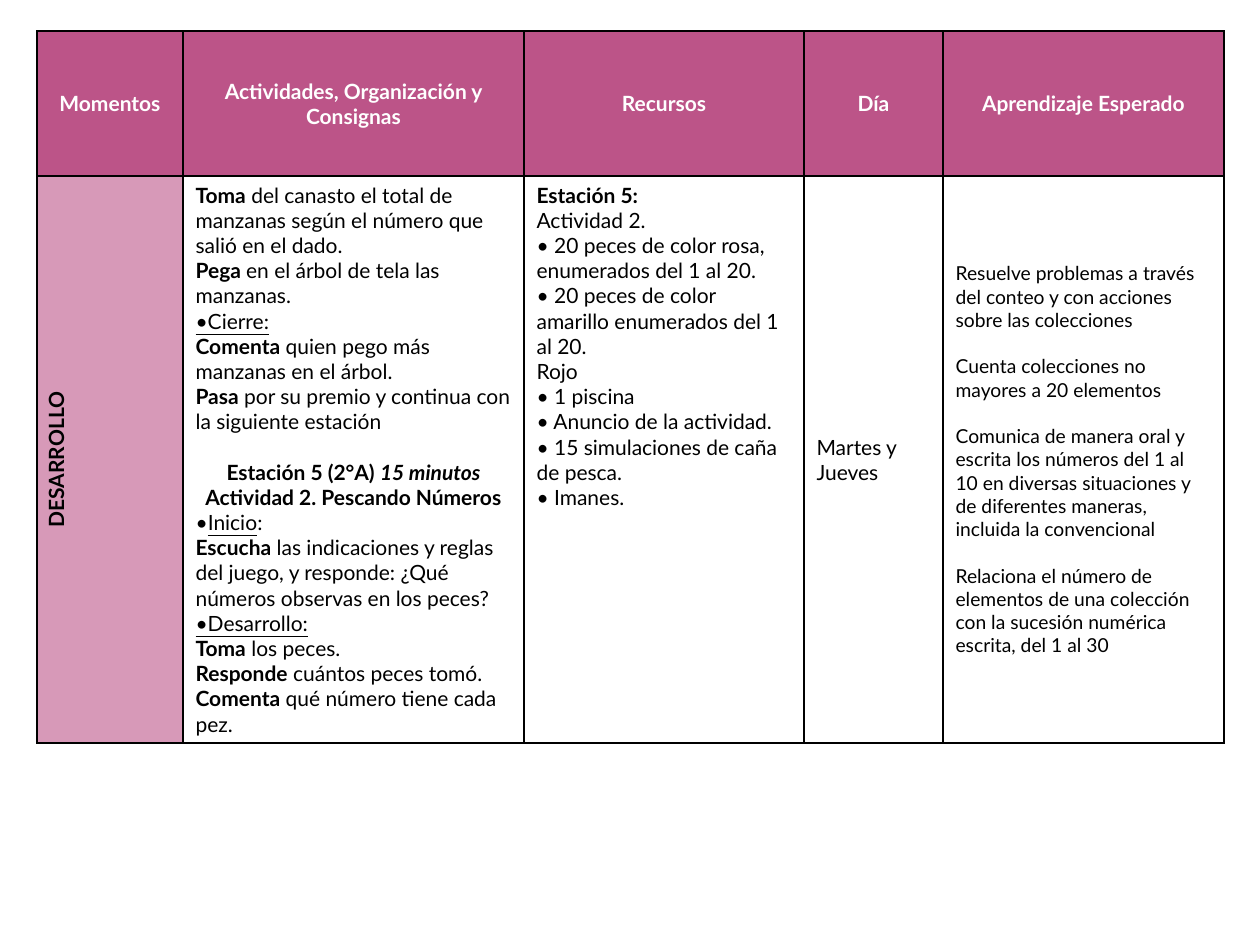
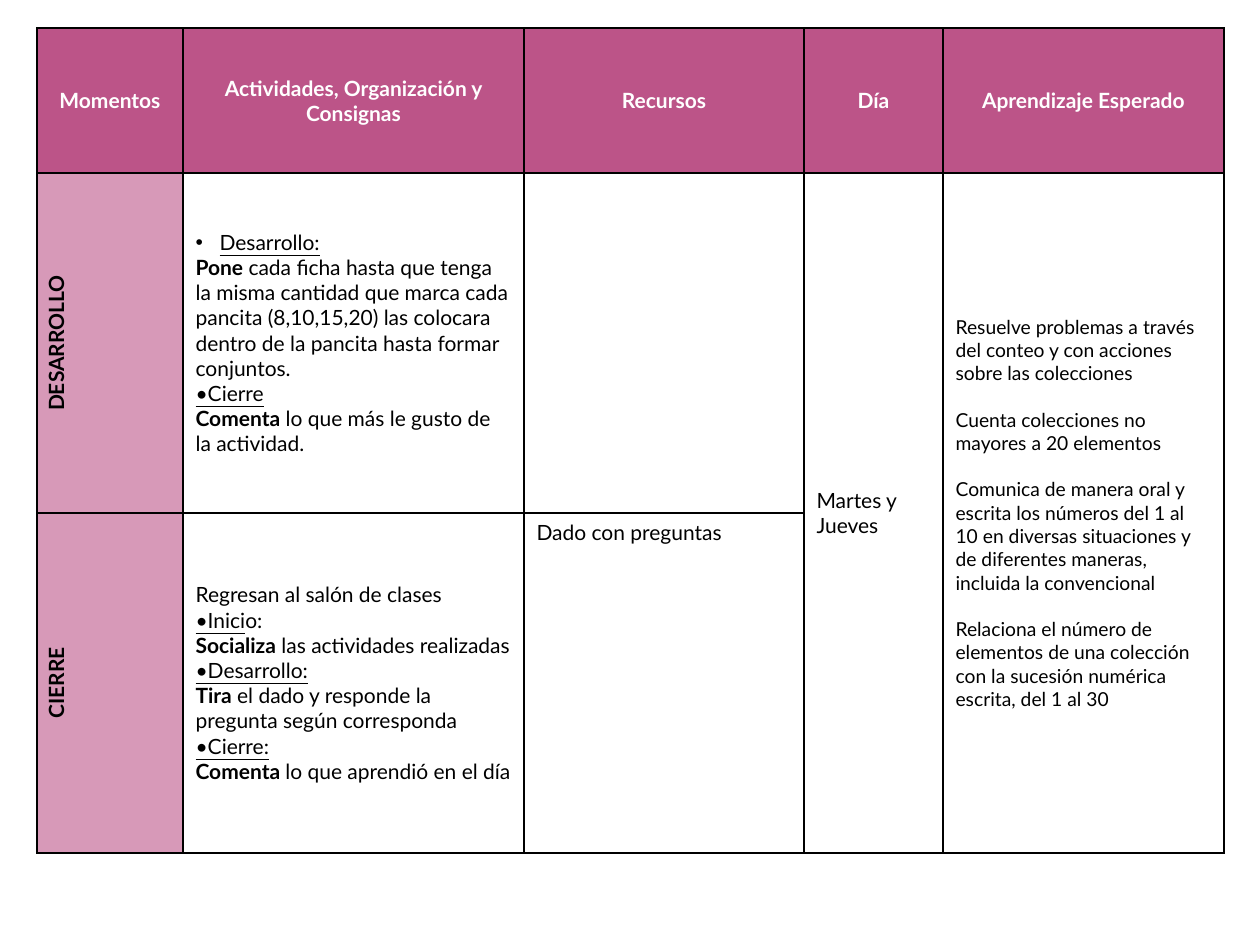
from lxml.etree import SubElement
from pptx import Presentation
from pptx.dml.color import RGBColor
from pptx.enum.text import MSO_ANCHOR, PP_ALIGN
from pptx.oxml.ns import qn
from pptx.util import Emu, Pt

PIXEL = 914400 / 126
ROSE = RGBColor(0xBC, 0x54, 0x88)
PINK = RGBColor(0xD7, 0x99, 0xB8)
WHITE = RGBColor(0xFF, 0xFF, 0xFF)
BLACK = RGBColor(0x00, 0x00, 0x00)
FONT = "Lato"
TABLE_LEFT = 37
COLUMN_WIDTHS = [146, 341, 280, 139, 281]
HEADER_HEIGHT = 145
LINE_GAP = 25
GOAL_GAP = 23


def write(paragraph, text, style="", size=12, color=BLACK):
    run = paragraph.add_run()
    run.text = text
    run.font.name = FONT
    run.font.size = Pt(size)
    run.font.color.rgb = color
    run.font.bold = "b" in style
    run.font.italic = "i" in style
    run.font.underline = "u" in style


def fill_cell(cell, lines, anchor=MSO_ANCHOR.MIDDLE, align=PP_ALIGN.LEFT, gap=0, **format):
    cell.vertical_anchor = anchor
    for index, line in enumerate(lines):
        frame = cell.text_frame
        paragraph = frame.add_paragraph() if index else frame.paragraphs[0]
        paragraph.alignment = align
        paragraph.space_before = Emu(int(gap * PIXEL)) if index else 0
        for text, style in line:
            write(paragraph, text, style, **format)


HEADERS = ["Momentos", "Actividades, Organización y Consignas", "Recursos", "Día",
           "Aprendizaje Esperado"]
GOALS = [
    "Resuelve problemas a través del conteo y con acciones sobre las colecciones",
    "Cuenta colecciones no mayores a 20 elementos",
    "Comunica de manera oral y escrita los números del 1 al 10 en diversas situaciones y de "
    "diferentes maneras, incluida la convencional",
    "Relaciona el número de elementos de una colección con la sucesión numérica escrita, "
    "del 1 al 30",
]
FISHING_ACTIVITIES = [
    [("Toma", "b"), (" del canasto el total de manzanas según el número que salió en el dado.", "")],
    [("Pega ", "b"), ("en el árbol de tela las manzanas.", "")],
    [("•Cierre:", "u")],
    [("Comenta", "b"), (" quien pego más manzanas en el árbol.", "")],
    [("Pasa", "b"), (" por su premio y continua con la siguiente estación", "")],
    [("Estación 5 (2°A) ", "b"), ("15 minutos", "bi")],
    [("Actividad 2. Pescando Números", "b")],
    [("•", ""), ("Inicio", "u"), (":", "")],
    [("Escucha", "b"), (" las indicaciones y reglas del juego, y responde: "
                        "¿Qué números observas en los peces?", "")],
    [("•Desarrollo:", "u")],
    [("Toma", "b"), (" los peces.", "")],
    [("Responde", "b"), (" cuántos peces tomó.", "")],
    [("Comenta", "b"), (" qué número tiene cada pez.", "")],
]
FISHING_RESOURCES = [
    [("Estación 5:", "b")],
    [("Actividad 2.", "")],
    [("• 20 peces de color rosa, enumerados del 1 al 20.", "")],
    [("• 20 peces de color amarillo enumerados del 1 al 20.", "")],
    [("Rojo", "")],
    [("• 1 piscina", "")],
    [("• Anuncio de la actividad.", "")],
    [("• 15 simulaciones de caña de pesca.", "")],
    [("• Imanes.", "")],
]
COUNTING_ACTIVITIES = [
    [("Desarrollo:", "u")],
    [("Pone", "b"), (" cada ficha hasta que tenga la misma cantidad que marca cada pancita "
                     "(8,10,15,20) las colocara dentro de la pancita hasta formar conjuntos.", "")],
    [("•Cierre", "u")],
    [("Comenta", "b"), (" lo que más le gusto de la actividad.", "")],
]
CLOSING_ACTIVITIES = [
    [("Regresan al salón de clases", "")],
    [("•Inici", "u"), ("o:", "")],
    [("Socializa", "b"), (" las actividades realizadas", "")],
    [("•Desarrollo:", "u")],
    [("Tira", "b"), (" el dado y responde la pregunta según corresponda", "")],
    [("•Cierre:", "u")],
    [("Comenta ", "b"), ("lo que aprendió en el día", "")],
]
PLANS = [
    (31, 566, [("DESARROLLO", FISHING_ACTIVITIES, FISHING_RESOURCES)]),
    (28, 340, [("DESARROLLO", COUNTING_ACTIVITIES, []),
               ("CIERRE", CLOSING_ACTIVITIES, [[("Dado con preguntas", "")]])]),
]

presentation = Presentation()
presentation.slide_width = Emu(int(1260 * PIXEL))
presentation.slide_height = Emu(int(945 * PIXEL))
tables = []

for top, moment_height, moments in PLANS:
    slide = presentation.slides.add_slide(presentation.slide_layouts[6])
    row_heights = [HEADER_HEIGHT] + [moment_height] * len(moments)
    bounds = [TABLE_LEFT, top, sum(COLUMN_WIDTHS), sum(row_heights)]
    table = slide.shapes.add_table(len(row_heights), len(COLUMN_WIDTHS),
                                   *[Emu(int(value * PIXEL)) for value in bounds]).table
    table.first_row = False
    table.horz_banding = False
    for column, width in zip(table.columns, COLUMN_WIDTHS):
        column.width = Emu(int(width * PIXEL))
    for row, height in zip(table.rows, row_heights):
        row.height = Emu(int(height * PIXEL))

    for cell in table.iter_cells():
        properties = cell._tc.get_or_add_tcPr()
        for side in ("lnL", "lnR", "lnT", "lnB"):
            border = SubElement(properties, qn(f"a:{side}"), w=str(Pt(1)))
            border_fill = SubElement(border, qn("a:solidFill"))
            SubElement(border_fill, qn("a:srgbClr"), val=str(BLACK))
        cell.fill.background()

    for column, header in enumerate(HEADERS):
        cell = table.cell(0, column)
        cell.fill.solid()
        cell.fill.fore_color.rgb = ROSE
        fill_cell(cell, [[(header, "b")]], align=PP_ALIGN.CENTER, color=WHITE)

    for row, (moment, activities, resources) in enumerate(moments, start=1):
        cell = table.cell(row, 0)
        cell.fill.solid()
        cell.fill.fore_color.rgb = PINK
        cell._tc.get_or_add_tcPr().set("vert", "vert270")
        fill_cell(cell, [[(moment, "b")]], align=PP_ALIGN.CENTER)
        fill_cell(table.cell(row, 1), activities)
        fill_cell(table.cell(row, 2), resources, anchor=MSO_ANCHOR.TOP)

    if len(moments) > 1:
        for column in (3, 4):
            table.cell(1, column).merge(table.cell(len(moments), column))
    fill_cell(table.cell(1, 3), [[("Martes y Jueves", "")]])
    fill_cell(table.cell(1, 4), [[(goal, "")] for goal in GOALS], gap=GOAL_GAP, size=11)
    tables.append(table)

fishing_table, counting_table = tables
station_titles = fishing_table.cell(1, 1).text_frame.paragraphs[5:7]
for paragraph in station_titles:
    paragraph.alignment = PP_ALIGN.CENTER
station_titles[0].space_before = Emu(int(LINE_GAP * PIXEL))

bullet_properties = counting_table.cell(1, 1).text_frame.paragraphs[0]._p.get_or_add_pPr()
indent = int(24 * PIXEL)
bullet_properties.set("marL", str(indent))
bullet_properties.set("indent", str(-indent))
SubElement(bullet_properties, qn("a:buFont"), typeface="Arial")
SubElement(bullet_properties, qn("a:buChar"), char="•")

presentation.save("out.pptx")
